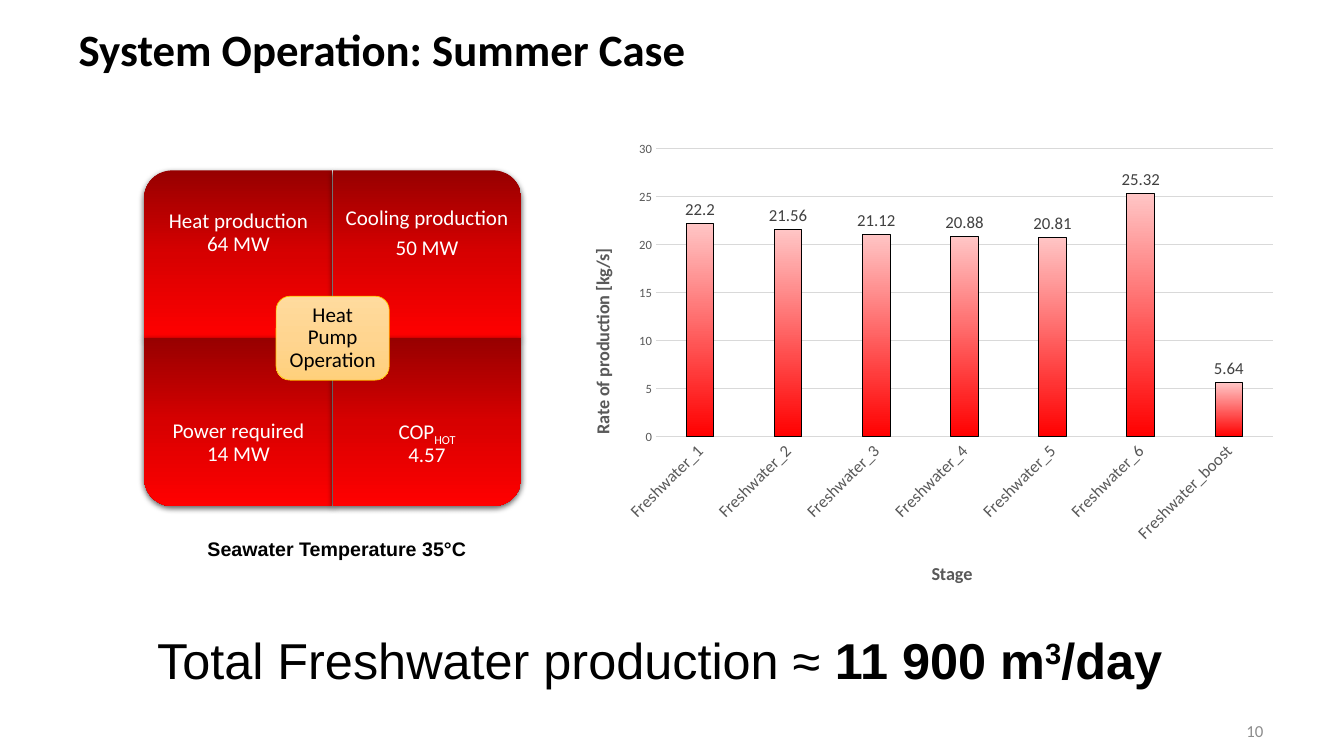
from dataclasses import dataclass

import pptx
import pptx.chart.data
import pptx.dml.color
import pptx.enum.chart
import pptx.enum.shapes
import pptx.enum.text
import pptx.oxml
import pptx.oxml.ns
import pptx.util

Inches = pptx.util.Inches
Pt = pptx.util.Pt
qn = pptx.oxml.ns.qn
SHAPE = pptx.enum.shapes.MSO_SHAPE
ALIGN = pptx.enum.text.PP_ALIGN
ANCHOR = pptx.enum.text.MSO_ANCHOR
NS = 'xmlns:a="http://schemas.openxmlformats.org/drawingml/2006/main"'
CNS = 'xmlns:c="http://schemas.openxmlformats.org/drawingml/2006/chart"'


@dataclass(frozen=True)
class Theme:
    heading: str = "Calibri"
    body: str = "Arial"
    black: str = "000000"
    white: str = "FFFFFF"
    muted: str = "8C8C8C"
    axis: str = "595959"
    label: str = "404040"
    grid: str = "D9D9D9"
    gold: str = "FFC000"
    reds: tuple = ((0, "970000"), (50, "D70000"), (100, "FF0000"))
    creams: tuple = ((0, "FFDB9E"), (50, "FFD590"), (100, "FFD07C"))
    bars: tuple = ((0, "FF0000"), (100, "FFC5C5"))
    title: int = 32
    total: int = 36
    quadrant: int = 15
    caption: int = 14
    axis_title: int = 13
    small: int = 12
    chart: int = 10
    tick: int = 9


THEME = Theme()


def rgb(color):
    return pptx.dml.color.RGBColor.from_string(color)


def style(font, size, color, name=THEME.heading, bold=False):
    font.size, font.name, font.bold = Pt(size), name, bold
    font.color.rgb = rgb(color)


def fill_gradient(fill, element, stops, angle):
    fill.gradient()
    grad = element.find(".//" + qn("a:gradFill"))
    grad.set("rotWithShape", "0")
    grad.find(qn("a:lin")).set("ang", str(angle * 60000))
    stop_list = grad.find(qn("a:gsLst"))
    for stop in list(stop_list):
        stop_list.remove(stop)
    for pos, color in stops:
        stop_list.append(pptx.oxml.parse_xml(
            f'<a:gs {NS} pos="{pos * 1000}"><a:srgbClr val="{color}"/></a:gs>'))


def set_frame(tf, inset=(0.1, 0.05), anchor=ANCHOR.TOP):
    tf.word_wrap = True
    tf.vertical_anchor = anchor
    tf.margin_left = tf.margin_right = Inches(inset[0])
    tf.margin_top = tf.margin_bottom = Inches(inset[1])


def add_text(slide, box, **frame):
    tf = slide.shapes.add_textbox(*map(Inches, box)).text_frame
    set_frame(tf, **frame)
    return tf


def add_run(p, text, baseline=0, bold=None):
    r = p.add_run()
    r.text = text
    if bold is not None:
        r.font.bold = bold
    if baseline:
        r._r.get_or_add_rPr().set("baseline", str(baseline * 1000))


def format_label(p, color):
    p.alignment = ALIGN.CENTER
    p.line_spacing = 0.9
    p.space_after = Pt(5.25)
    style(p.font, THEME.quadrant, color)


def add_title(slide, box):
    title = slide.shapes.title
    title.left, title.top, title.width, title.height = map(Inches, box)
    tf = title.text_frame
    set_frame(tf, inset=(0, 0))
    tf.auto_size = pptx.enum.text.MSO_AUTO_SIZE.NONE
    p = tf.paragraphs[0]
    p.text = "System Operation: Summer\u00a0Case".replace("\u00a0", " ")
    p.alignment = ALIGN.LEFT
    p.line_spacing = 0.9
    style(p.font, THEME.title, THEME.black, bold=True)


def add_quadrant(slide, box, rotation):
    x, y, w, h = box
    if rotation % 180:
        x, y, w, h = x + (w - h) / 2, y + (h - w) / 2, h, w
    sp = slide.shapes.add_shape(SHAPE.ROUND_1_RECTANGLE, *map(Inches, (x, y, w, h)))
    sp.rotation = rotation
    sp.line.fill.background()
    fill_gradient(sp.fill, sp._element, THEME.reds, 90)
    sp.shadow.inherit = False
    sp._element.spPr.find(qn("a:effectLst")).append(pptx.oxml.parse_xml(
        f'<a:outerShdw {NS} blurRad="57150" dist="19050" dir="5400000" algn="ctr" '
        'rotWithShape="0"><a:srgbClr val="000000"><a:alpha val="63000"/></a:srgbClr>'
        '</a:outerShdw>'))


def add_matrix(slide, box):
    x, y, w, h = box
    qw, qh, label_h = w / 2, h / 2, h * 0.375
    quadrants = (
        (0, 0, 270, [[("Heat production\v64 MW", 0)]]),
        (0, 1, 0, [[("Cooling production", 0)], [("50 MW", 0)]]),
        (1, 0, 180, [[("Power required\v14 MW", 0)]]),
        (1, 1, 90, [[("COP", 0), ("HOT", -25), ("\v4.57", 0)]]),
    )
    for row, col, rotation, paragraphs in quadrants:
        qx, qy = x + col * qw, y + row * qh
        add_quadrant(slide, (qx, qy, qw, qh), rotation)
        label_y = qy + row * (qh - label_h)
        tf = add_text(slide, (qx, label_y, qw, label_h),
                      inset=(0.1, 0.12), anchor=ANCHOR.MIDDLE)
        for i, runs in enumerate(paragraphs):
            p = tf.add_paragraph() if i else tf.paragraphs[0]
            format_label(p, THEME.white)
            for text, baseline in runs:
                lines = text.split("\v")
                for j, line in enumerate(lines):
                    if j:
                        p.add_line_break()
                    if line:
                        add_run(p, line, baseline)
    cw, ch = w * 0.3, h / 4
    center = (x + (w - cw) / 2, y + (h - ch) / 2, cw, ch)
    sp = slide.shapes.add_shape(SHAPE.ROUNDED_RECTANGLE, *map(Inches, center))
    sp.shadow.inherit = False
    fill_gradient(sp.fill, sp._element, THEME.creams, 90)
    sp.line.color.rgb, sp.line.width = rgb(THEME.gold), Pt(0.5)
    set_frame(sp.text_frame, inset=(0.06, 0.06), anchor=ANCHOR.MIDDLE)
    p = sp.text_frame.paragraphs[0]
    p.text = "Heat Pump Operation"
    format_label(p, THEME.black)


def place(parent, before, target, **values):
    for old in parent.findall(qn("c:layout")):
        parent.remove(old)
    inner = f'<c:layoutTarget val="{target}"/>' if target else ""
    modes = "".join(f'<c:{k}Mode val="edge"/>' for k in "xy")
    sizes = "".join(f'<c:{k} val="{v}"/>' for k, v in values.items())
    layout = pptx.oxml.parse_xml(
        f'<c:layout {CNS}><c:manualLayout>{inner}{modes}{sizes}</c:manualLayout></c:layout>')
    parent.insert(before, layout)


def format_axis(axis, title, size, x, y):
    axis.major_tick_mark = axis.minor_tick_mark = pptx.enum.chart.XL_TICK_MARK.NONE
    style(axis.tick_labels.font, size, THEME.axis)
    p = axis.axis_title.text_frame.paragraphs[0]
    p.text = title
    style(p.font, THEME.axis_title, THEME.axis, bold=True)
    place(axis.axis_title._element, 1, None, x=x, y=y)


def add_production_chart(slide, box):
    data = pptx.chart.data.CategoryChartData()
    data.categories = [f"Freshwater_{n}" for n in (1, 2, 3, 4, 5, 6, "boost")]
    data.add_series("Series 1", (22.2, 21.56, 21.12, 20.88, 20.81, 25.32, 5.64))
    chart = slide.shapes.add_chart(
        pptx.enum.chart.XL_CHART_TYPE.COLUMN_CLUSTERED, *map(Inches, box), data).chart
    chart.has_legend = chart.has_title = False
    style(chart.font, THEME.chart, THEME.black)
    place(chart._chartSpace.chart.plotArea, 0, "inner", x=0.13, y=0.036, w=0.85, h=0.612)
    cat, val = chart.category_axis, chart.value_axis
    format_axis(cat, "Stage", THEME.small, 0.505, 0.905)
    format_axis(val, "Rate of production [kg/s]", THEME.tick, 0.035, 0.24)
    cat.format.line.color.rgb, cat.format.line.width = rgb(THEME.grid), Pt(0.75)
    cat._element.find(qn("c:txPr")).find(qn("a:bodyPr")).set("rot", "-2700000")
    val.axis_title.text_frame._txBody.bodyPr.set("rot", "-5400000")
    val.minimum_scale, val.maximum_scale, val.major_unit = 0, 30, 5
    val.format.line.fill.background()
    grid = val.major_gridlines.format.line
    grid.color.rgb, grid.width = rgb(THEME.grid), Pt(0.75)
    plot = chart.plots[0]
    plot.gap_width, plot.overlap, plot.vary_by_categories = 219, -27, False
    bars = plot.series[0]
    bars.invert_if_negative = False
    fill_gradient(bars.format.fill, bars._element, THEME.bars, 270)
    bars.format.line.color.rgb, bars.format.line.width = rgb(THEME.black), Pt(0.75)
    labels = bars.data_labels
    labels.show_value = True
    labels.position = pptx.enum.chart.XL_LABEL_POSITION.OUTSIDE_END
    style(labels.font, THEME.small, THEME.label)


def add_caption(slide, box):
    p = add_text(slide, box).paragraphs[0]
    p.text = "Seawater Temperature 35°C"
    style(p.font, THEME.caption, THEME.black, THEME.body, True)


def add_total(slide, box):
    p = add_text(slide, box).paragraphs[0]
    style(p.font, THEME.total, THEME.black, THEME.body)
    add_run(p, "Total Freshwater production ≈ ")
    for text, baseline in (("11 900 m", 0), ("3", 30), ("/day", 0)):
        add_run(p, text, baseline, True)


def add_page_number(slide, box):
    p = add_text(slide, box, inset=(0, 0), anchor=ANCHOR.MIDDLE).paragraphs[0]
    p.text = "10"
    p.alignment = ALIGN.RIGHT
    style(p.font, THEME.small, THEME.muted)


def main():
    prs = pptx.Presentation()
    prs.slide_width, prs.slide_height = Inches(13.33), Inches(7.5)
    slide = prs.slides.add_slide(prs.slide_layouts[5])
    add_title(slide, (0.78, 0.28, 11.88, 0.98))
    add_page_number(slide, (12.18, 7.13, 0.35, 0.24))
    add_caption(slide, (1.96, 5.28, 2.96, 0.34))
    add_matrix(slide, (1.43, 1.69, 3.74, 3.33))
    add_total(slide, (1.46, 6.19, 10.53, 0.71))
    add_production_chart(slide, (5.57, 1.31, 7.2, 4.67))
    prs.save("out.pptx")


if __name__ == "__main__":
    main()
